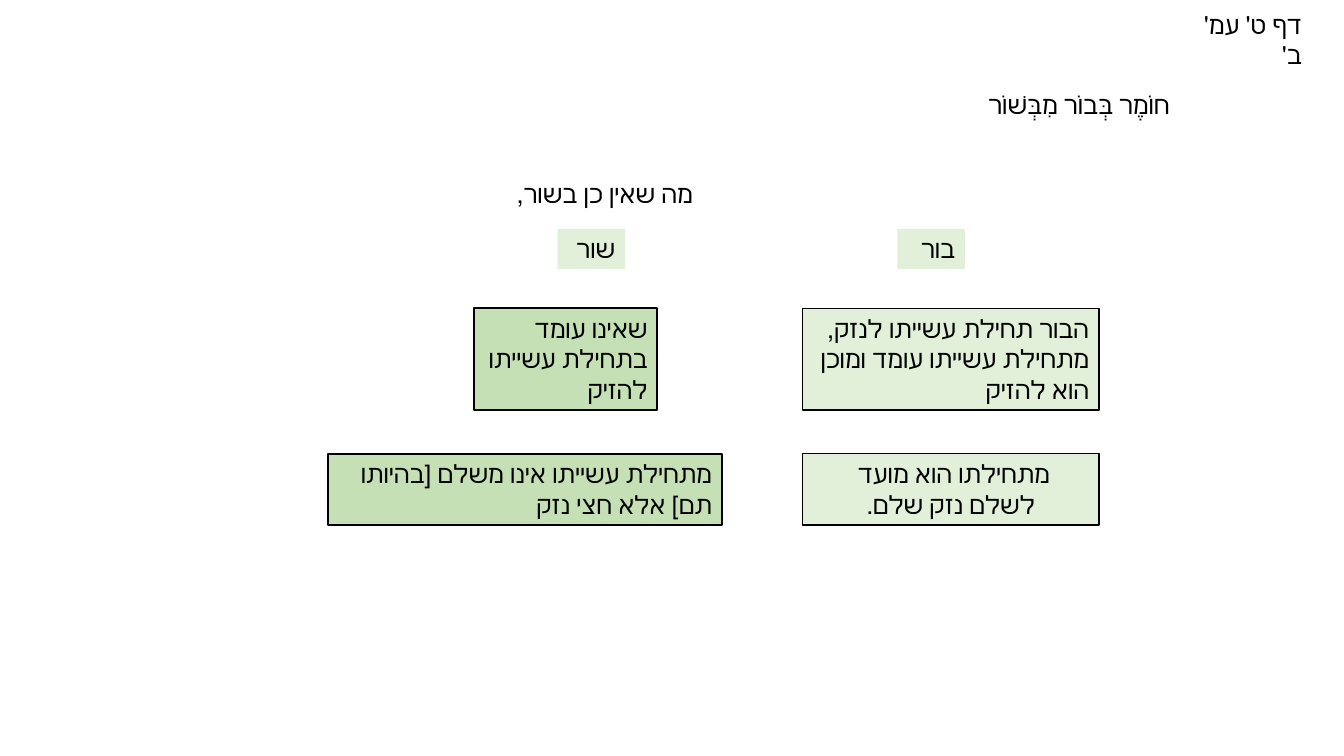
from pptx import Presentation
from pptx.dml.color import RGBColor
from pptx.enum.text import MSO_AUTO_SIZE as AutoSize, PP_ALIGN as Align
from pptx.util import Inches, Pt

BLACK = RGBColor(0x00, 0x00, 0x00)
PALE_GREEN = RGBColor(0xE2, 0xF0, 0xD9)
GREEN = RGBColor(0xC5, 0xE0, 0xB4)

HEADER_TOP, HEADER_WIDTH, LINE_HEIGHT = 2.27, 0.67, 0.4
ORIGIN_TOP, ORIGIN_HEIGHT = 3.06, 1.01
PAYMENT_TOP, PAYMENT_HEIGHT = 4.5, 0.71
PIT_LEFT, PIT_WIDTH = 7.96, 2.94


def add_hebrew_text(slide, text, left, top, width, height=LINE_HEIGHT,
                    font="Calibri", align=Align.RIGHT, wrap=True):
    """Add a right-to-left text box and return it."""
    box = slide.shapes.add_textbox(Inches(left), Inches(top), Inches(width), Inches(height))
    frame = box.text_frame
    frame.text = text
    frame.word_wrap = wrap
    frame.auto_size = AutoSize.SHAPE_TO_FIT_TEXT
    for paragraph in frame.paragraphs:
        paragraph.alignment = align
        paragraph._p.get_or_add_pPr().set("rtl", "1")
        for run in paragraph.runs:
            run.font.size = Pt(18)
            run.font.name = font
            run.font.color.rgb = BLACK
    return box


def add_panel(slide, text, left, top, width, height, fill, line_width=None, align=Align.RIGHT):
    """Add a filled text panel, outlined when a line width is given."""
    panel = add_hebrew_text(slide, text, left, top, width, height, align=align)
    panel.fill.solid()
    panel.fill.fore_color.rgb = fill
    if line_width:
        panel.line.color.rgb = BLACK
        panel.line.width = Pt(line_width)


def main():
    """Build the slide comparing the pit with the ox."""
    presentation = Presentation()
    presentation.slide_width = Inches(13.33)
    presentation.slide_height = Inches(7.5)
    slide = presentation.slides.add_slide(presentation.slide_layouts[6])

    add_hebrew_text(slide, "מה שאין כן בשור,", 4.99, 1.72, 1.98)
    add_hebrew_text(slide, "דף ט' עמ' ב'", 11.59, 0.04, 1.42)
    add_hebrew_text(slide, "חוֹמֶר בְּבוֹר מִבְּשׁוֹר ", 9.67, 0.84, 2.03, font="Arial", wrap=False)

    for text, left in (("שור", 5.53), ("בור", 8.9)):
        add_panel(slide, text, left, HEADER_TOP, HEADER_WIDTH, LINE_HEIGHT, PALE_GREEN)

    add_panel(slide, "מתחילתו הוא מועד \nלשלם נזק שלם.",
              PIT_LEFT, PAYMENT_TOP, PIT_WIDTH, PAYMENT_HEIGHT, PALE_GREEN, 1, Align.CENTER)
    add_panel(slide, "הבור תחילת עשייתו לנזק, מתחילת עשייתו עומד ומוכן הוא להזיק",
              PIT_LEFT, ORIGIN_TOP, PIT_WIDTH, ORIGIN_HEIGHT, PALE_GREEN, 1)
    add_panel(slide, "שאינו עומד בתחילת עשייתו להזיק",
              4.7, ORIGIN_TOP, 1.82, ORIGIN_HEIGHT, GREEN, 1.5)
    add_panel(slide, "מתחילת עשייתו אינו משלם [בהיותו תם] אלא חצי נזק",
              3.25, PAYMENT_TOP, 3.91, PAYMENT_HEIGHT, GREEN, 1.5)

    presentation.save("out.pptx")


if __name__ == "__main__":
    main()
